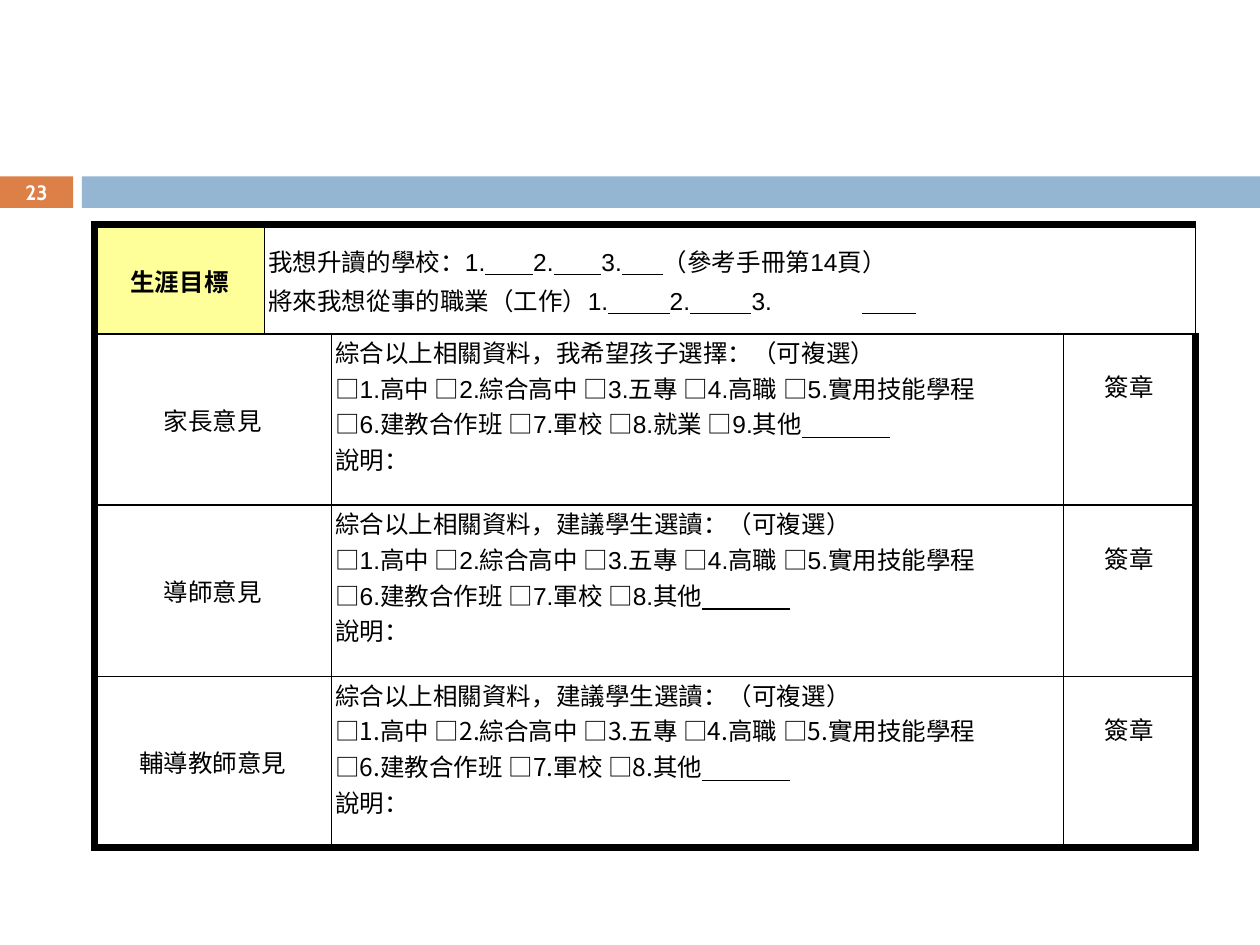
import itertools
import lxml.etree
import pptx
import pptx.dml.color
import pptx.enum.shapes
import pptx.enum.text
import pptx.oxml
import pptx.oxml.ns
import pptx.util

Inches, Pt = pptx.util.Inches, pptx.util.Pt
ALIGN = pptx.enum.text.PP_ALIGN
MIDDLE = pptx.enum.text.MSO_ANCHOR.MIDDLE

COLORS = {"accent": "DD8047", "bar": "94B6D2", "goal": "FFFF99", "paper": "FFFFFF", "ink": "000000"}
ARIAL, TIMES, NOTO = "Arial", "Times New Roman", "Noto Sans CJK SC"

# "_" 
GOAL_LABEL = "生涯目標"
GOAL_LINES = [
    "我想升讀的學校：1._______2._______3.______（參考手冊第14頁）",
    "將來我想從事的職業（工作）1._________2._________3.\t________",
]
SCHOOLS = "□1.高中 □2.綜合高中 □3.五專 □4.高職 □5.實用技能學程"
ADVICE = "綜合以上相關資料，建議學生選讀：（可複選）"
NOTE = "說明："
SIGNATURE = "簽章"
OPINIONS = [
    ("家長意見", ["綜合以上相關資料，我希望孩子選擇：（可複選）", SCHOOLS,
              "□6.建教合作班 □7.軍校 □8.就業 □9.其他________________", NOTE], ARIAL),
    ("導師意見", [ADVICE, SCHOOLS, "□6.建教合作班 □7.軍校 □8.其他________________", NOTE], ARIAL),
    ("輔導教師意見", [ADVICE, SCHOOLS, "□6.建教合作班 □7.軍校 □8.其他________________", NOTE], NOTO),
]
COLUMNS = [1.35, 0.53, 5.81, 1.05]
ROWS = [0.87, 1.36, 1.36, 1.36]
THICK, THIN = 4.5, 1


def rgb(name):
    return pptx.dml.color.RGBColor.from_string(COLORS[name])


def add_run(paragraph, text, font, size=14, color="ink", bold=False, underline=False):
    run = paragraph.add_run()
    run.text = text
    run.font.name, run.font.size, run.font.bold = font, Pt(size), bold
    run.font.color.rgb = rgb(color)
    if underline:
        run.font.underline = True
    east_asian = pptx.oxml.parse_xml(
        f'<a:ea {pptx.oxml.ns.nsdecls("a")} typeface="{NOTO}"/>')
    run.font._element.find(pptx.oxml.ns.qn("a:latin")).addnext(east_asian)


def add_line(paragraph, text, plain_font, number_font):
    def kind(char):
        if char == "_":
            return "blank"
        if char == "□":
            return "box"
        return "number" if char in "0123456789." else "plain"

    fonts = {"blank": plain_font, "box": NOTO, "number": number_font, "plain": plain_font}
    for part, chars in itertools.groupby(text, kind):
        add_run(paragraph, "".join(chars).replace("_", " "), fonts[part], underline=part == "blank")


def fill_cell(cell, lines, plain_font=TIMES, number_font=ARIAL, align=ALIGN.LEFT,
              spacing=None, bold=False, top=0, middle=False):
    cell.margin_left = cell.margin_right = Inches(0.03)
    cell.margin_top, cell.margin_bottom = Inches(top), 0
    if middle:
        cell.vertical_anchor = MIDDLE
    for index, text in enumerate(lines):
        frame = cell.text_frame
        paragraph = frame.add_paragraph() if index else frame.paragraphs[0]
        paragraph.alignment = align
        if spacing:
            paragraph.line_spacing = Pt(spacing)
        if bold:
            add_run(paragraph, text, plain_font, bold=True)
        else:
            add_line(paragraph, text, plain_font, number_font)


def border_cell(cell, widths):
    properties = cell._tc.get_or_add_tcPr()
    for index, (side, width) in enumerate(zip("LRTB", widths)):
        properties.insert(index, pptx.oxml.parse_xml(
            f'<a:ln{side} {pptx.oxml.ns.nsdecls("a")} w="{Pt(width)}"><a:solidFill>'
            f'<a:srgbClr val="{COLORS["ink"]}"/></a:solidFill></a:ln{side}>'))


def add_band(slide, left, width, color):
    band = slide.shapes.add_shape(pptx.enum.shapes.MSO_SHAPE.RECTANGLE,
                                  Inches(left), Inches(1.4), Inches(width), Inches(0.25))
    band.shadow.inherit = False
    band.fill.solid()
    band.fill.fore_color.rgb = rgb(color)
    band.line.fill.background()


def add_page_number(slide):
    page = slide.shapes.add_textbox(0, Inches(1.39), Inches(0.58), Inches(0.27)).text_frame
    page.word_wrap = True
    page.vertical_anchor = MIDDLE
    page.margin_left = page.margin_right = page.margin_top = page.margin_bottom = 0
    page.paragraphs[0].alignment = ALIGN.CENTER
    add_run(page.paragraphs[0], "23", "Cabin", 11.9, "paper", bold=True)


def add_form(slide):
    form = slide.shapes.add_table(len(ROWS), len(COLUMNS), Inches(0.75), Inches(1.78),
                                  Inches(sum(COLUMNS)), Inches(sum(ROWS))).table
    form.first_row = form.horz_banding = False
    for column, width in zip(form.columns, COLUMNS):
        column.width = Inches(width)
    for row, height in zip(form.rows, ROWS):
        row.height = Inches(height)

    last_row, last_column = len(ROWS) - 1, len(COLUMNS) - 1
    for r, c in itertools.product(range(len(ROWS)), range(len(COLUMNS))):
        cell = form.cell(r, c)
        cell.fill.solid()
        cell.fill.fore_color.rgb = rgb("goal" if r == c == 0 else "paper")
        edges = (c == 0, c == last_column, r == 0, r == last_row)
        border_cell(cell, [THICK if outer else THIN for outer in edges])

    form.cell(0, 1).merge(form.cell(0, last_column))
    fill_cell(form.cell(0, 0), [GOAL_LABEL], align=ALIGN.CENTER, spacing=22, bold=True, middle=True)
    goals = form.cell(0, 1)
    fill_cell(goals, GOAL_LINES, ARIAL, align=ALIGN.JUSTIFY, spacing=22, middle=True)
    tabs = lxml.etree.SubElement(goals.text_frame.paragraphs[1]._p.get_or_add_pPr(),
                                 pptx.oxml.ns.qn("a:tabLst"))
    lxml.etree.SubElement(tabs, pptx.oxml.ns.qn("a:tab"), pos=str(Inches(4.71)), algn="l")

    for r, (who, lines, number_font) in enumerate(OPINIONS, 1):
        form.cell(r, 0).merge(form.cell(r, 1))
        fill_cell(form.cell(r, 0), [who], align=ALIGN.CENTER, middle=True)
        fill_cell(form.cell(r, 2), lines, number_font=number_font)
        fill_cell(form.cell(r, 3), [SIGNATURE], NOTO, align=ALIGN.CENTER, spacing=20, top=0.28)


def main():
    deck = pptx.Presentation()
    deck.slide_width, deck.slide_height = Inches(10), Inches(7.5)
    slide = deck.slides.add_slide(deck.slide_layouts[6])
    add_band(slide, 0, 0.58, "accent")
    add_band(slide, 0.65, 9.35, "bar")
    add_page_number(slide)
    add_form(slide)
    deck.save("out.pptx")


if __name__ == "__main__":
    main()
